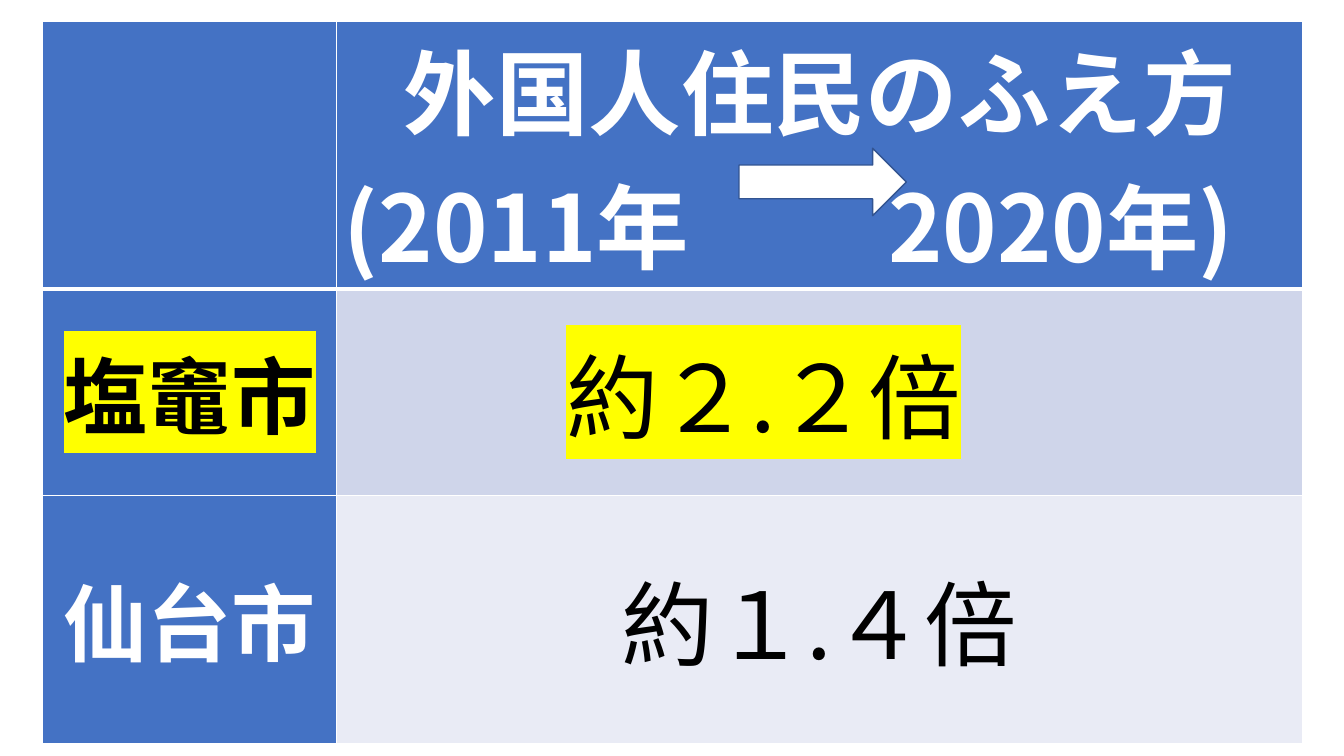
from lxml import etree
from pptx import Presentation
from pptx.dml.color import RGBColor
from pptx.enum import shapes, text
from pptx.oxml import ns
from pptx.util import Inches, Pt

FONT = "Noto Sans CJK JP"
WHITE = RGBColor(0xFF, 0xFF, 0xFF)
BLACK = RGBColor(0, 0, 0)
YELLOW = RGBColor(0xFF, 0xFF, 0)
BLUE = RGBColor(0x44, 0x72, 0xC4)
DARK_BLUE = RGBColor(0x32, 0x54, 0x91)
BAND_DARK = RGBColor(0xCF, 0xD5, 0xEA)
BAND_LIGHT = RGBColor(0xE9, 0xEB, 0xF5)


def add_run(paragraph, words, size, color, bold, highlight=None):
    run = paragraph.add_run()
    run.text = words
    run.font.size = Pt(size)
    run.font.bold = bold
    run.font.color.rgb = color
    properties = run.font._element
    if highlight is not None:
        mark = etree.SubElement(properties, ns.qn("a:highlight"))
        etree.SubElement(mark, ns.qn("a:srgbClr"), val=str(highlight))
    run.font.name = FONT
    etree.SubElement(properties, ns.qn("a:ea"), typeface=FONT)


def style_cell(cell, fill, bottom_width=1):
    cell.fill.solid()
    cell.fill.fore_color.rgb = fill
    cell.margin_left = cell.margin_right = Inches(0.07)
    cell.margin_top = cell.margin_bottom = 0
    # Borders come before the fill in the cell properties
    properties = cell._tc.get_or_add_tcPr()
    widths = {"lnL": 1, "lnR": 1, "lnT": 1, "lnB": bottom_width}
    for position, (side, width) in enumerate(widths.items()):
        border = etree.Element(ns.qn(f"a:{side}"), w=str(Pt(width)))
        solid = etree.SubElement(border, ns.qn("a:solidFill"))
        etree.SubElement(solid, ns.qn("a:srgbClr"), val=str(WHITE))
        properties.insert(position, border)


def fill_heading(cell):
    title, years = cell.text_frame.paragraphs[0], cell.text_frame.add_paragraph()
    title.alignment = text.PP_ALIGN.CENTER
    add_run(title, "外国人住民のふえ方", 66, WHITE, True)
    # A tab stop leaves room for the arrow between the years
    years.alignment = text.PP_ALIGN.LEFT
    tabs = etree.SubElement(years._p.get_or_add_pPr(), ns.qn("a:tabLst"))
    etree.SubElement(tabs, ns.qn("a:tab"), pos=str(Inches(5.4)), algn="l")
    add_run(years, "(2011年\t2020年)", 66, WHITE, True)


def add_growth_table(slide, left, top, width, height):
    table = slide.shapes.add_table(3, 2, left, top, width, height).table
    table.columns[0].width = Inches(2.92)
    table.columns[1].width = width - Inches(2.92)
    for row, row_height in zip(table.rows, (2.28, 2.05, 2.46)):
        row.height = Inches(row_height)

    # Heading row
    for cell in table.rows[0].cells:
        style_cell(cell, BLUE, bottom_width=3)
    fill_heading(table.cell(0, 1))

    # City rows
    cities = [
        ("塩竈市", "約２.２倍", BLACK, YELLOW, BAND_DARK),
        ("仙台市", "約１.４倍", WHITE, None, BAND_LIGHT),
    ]
    for row, (city, growth, city_color, highlight, band) in enumerate(cities, 1):
        city_cell, growth_cell = table.rows[row].cells
        style_cell(city_cell, BLUE)
        style_cell(growth_cell, band)
        for cell in (city_cell, growth_cell):
            cell.vertical_anchor = text.MSO_ANCHOR.MIDDLE
            cell.text_frame.paragraphs[0].alignment = text.PP_ALIGN.CENTER
        add_run(city_cell.text_frame.paragraphs[0], city, 60, city_color, True, highlight)
        add_run(growth_cell.text_frame.paragraphs[0], growth, 66, BLACK, False, highlight)
    # The highlighted figure sits left of the centre
    table.cell(1, 1).margin_right = Inches(1.18)


def add_year_arrow(slide, left, top, width, height):
    arrow = slide.shapes.add_shape(
        shapes.MSO_SHAPE.RIGHT_ARROW, left, top, width, height)
    arrow.shadow.inherit = False
    arrow.fill.solid()
    arrow.fill.fore_color.rgb = WHITE
    arrow.line.color.rgb = DARK_BLUE
    arrow.line.width = Pt(1)


def main():
    presentation = Presentation()
    presentation.slide_width = Inches(13.33)
    presentation.slide_height = Inches(7.5)
    slide = presentation.slides.add_slide(presentation.slide_layouts[6])
    left, top = Inches(0.42), Inches(0.21)
    add_growth_table(slide, left, top, Inches(12.5), Inches(6.8))
    add_year_arrow(slide, left + Inches(6.91), top + Inches(1.26),
                   Inches(1.66), Inches(0.67))
    presentation.save("out.pptx")


if __name__ == "__main__":
    main()
